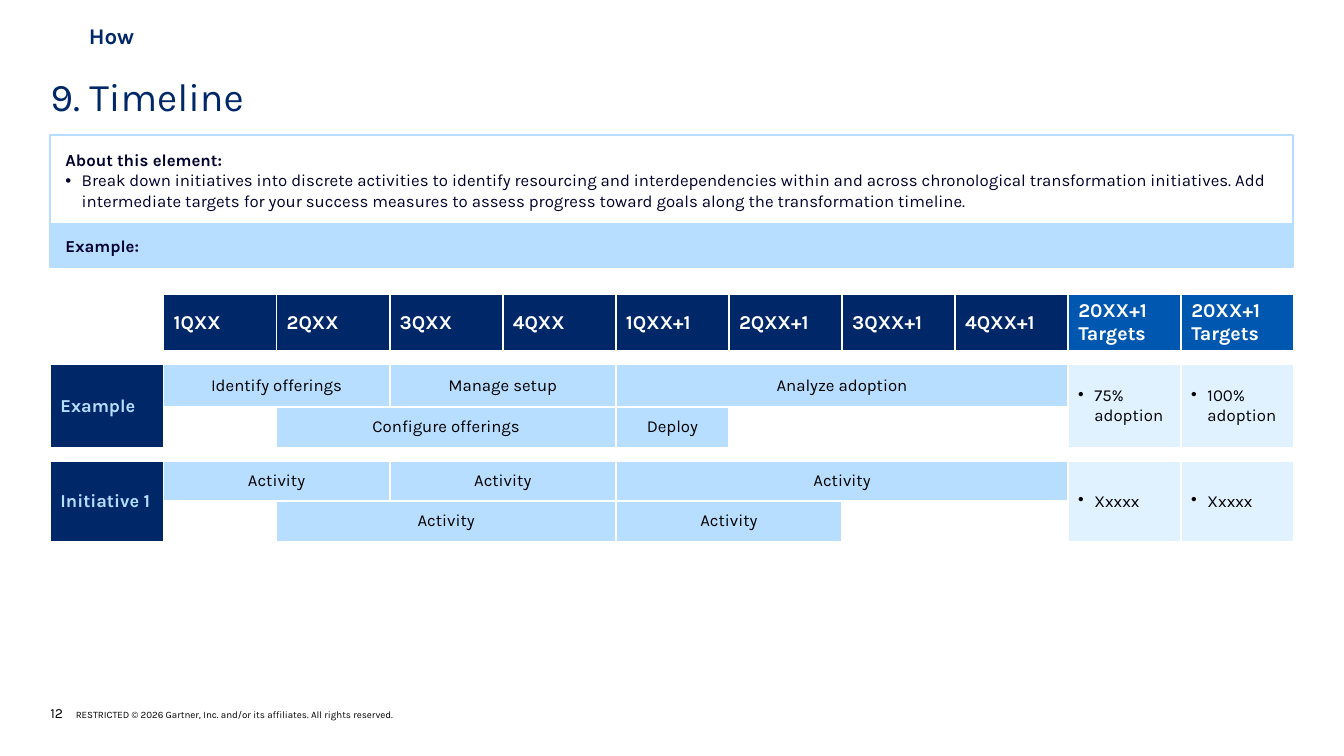
from dataclasses import dataclass
from typing import Any

from lxml import etree
from pptx import Presentation
from pptx.dml.color import RGBColor
from pptx.enum.shapes import MSO_SHAPE
from pptx.enum.text import MSO_ANCHOR, MSO_AUTO_SIZE, PP_ALIGN
from pptx.oxml.ns import qn
from pptx.util import Cm, Pt

RECTANGLE = MSO_SHAPE.RECTANGLE
TOP, MIDDLE, BOTTOM = MSO_ANCHOR.TOP, MSO_ANCHOR.MIDDLE, MSO_ANCHOR.BOTTOM
LEFT, CENTER = PP_ALIGN.LEFT, PP_ALIGN.CENTER
NO_AUTOFIT = MSO_AUTO_SIZE.NONE

FONT = "Karla"
NAVY, BLUE, SKY, PALE = "002869", "0057AF", "B8DEFF", "E0F1FF"
INK, BLACK, WHITE = "00002D", "000000", "FFFFFF"
MARGIN, CONTENT_WIDTH = 1.27, 31.32
COLUMN_WIDTH = 2.85
ROW_HEIGHTS = [1.42, 0.34, 1.07, 1.02, 0.34, 1.0, 1.0]
SPACER_ROWS = [1, 4]
HEADERS = ["1QXX", "2QXX", "3QXX", "4QXX", "1QXX+1", "2QXX+1", "3QXX+1", "4QXX+1",
           "20XX+1 Targets", "20XX+1\nTargets"]
TARGET_COLUMN = 9


@dataclass
class TextStyle:
    size: float
    color: str
    bold: bool = False
    align: Any = LEFT


@dataclass
class Bar:
    text: str
    row: int
    column: int
    span: int


@dataclass
class Initiative:
    name: str
    row: int
    targets: list[str]


BARS = [
    Bar("Identify offerings", 2, 1, 2),
    Bar("Manage setup", 2, 3, 2),
    Bar("Analyze adoption", 2, 5, 4),
    Bar("Configure offerings", 3, 2, 3),
    Bar("Deploy", 3, 5, 1),
    Bar("Activity", 5, 1, 2),
    Bar("Activity", 5, 3, 2),
    Bar("Activity", 5, 5, 4),
    Bar("Activity", 6, 2, 3),
    Bar("Activity", 6, 5, 2),
]
INITIATIVES = [
    Initiative("Example", 2, ["75% adoption", "100% adoption"]),
    Initiative("Initiative 1", 5, ["Xxxxx", "Xxxxx"]),
]


def color(value: str) -> RGBColor:
    return RGBColor.from_string(value)


def apply(target: Any, values: dict[str, Any]) -> None:
    for name, value in values.items():
        setattr(target, name, value)


def place(shape: Any, left: float, top: float, width: float, height: float) -> None:
    apply(shape, {"left": Cm(left), "top": Cm(top), "width": Cm(width), "height": Cm(height)})


def margins(horizontal: float, vertical: float) -> dict[str, Any]:
    return {"margin_left": Cm(horizontal), "margin_right": Cm(horizontal),
            "margin_top": Cm(vertical), "margin_bottom": Cm(vertical)}


def set_frame(shape: Any, anchor: Any, horizontal: float = 0, vertical: float = 0) -> Any:
    frame = shape.text_frame
    apply(frame, {"word_wrap": True, "auto_size": NO_AUTOFIT, "vertical_anchor": anchor,
                  **margins(horizontal, vertical)})
    return frame


def add_run(paragraph: Any, text: str, style: TextStyle) -> None:
    run = paragraph.add_run()
    run.text = text
    apply(run.font, {"name": FONT, "size": Pt(style.size), "bold": style.bold})
    run.font.color.rgb = color(style.color)


def write(paragraph: Any, text: str, style: TextStyle) -> None:
    apply(paragraph, {"alignment": style.align, "space_before": Pt(0)})
    add_run(paragraph, text, style)


def indent(paragraph: Any, distance: float, bullet: str = "") -> None:
    properties = paragraph._p.get_or_add_pPr()
    properties.set("marL", str(Cm(distance)))
    properties.set("indent", str(-Cm(distance)))
    if bullet:
        etree.SubElement(properties, qn("a:buChar")).set("char", bullet)
    else:
        etree.SubElement(properties, qn("a:buNone"))


def outline(shape: Any) -> None:
    shape.line.color.rgb = color(SKY)
    shape.line.width = Pt(1.5)


def add_borders(cell: Any) -> None:
    properties = cell._tc.get_or_add_tcPr()
    for side in ("a:lnL", "a:lnR", "a:lnT", "a:lnB"):
        line = etree.SubElement(properties, qn(side), w=str(Pt(1.5)))
        fill = etree.SubElement(line, qn("a:solidFill"))
        etree.SubElement(fill, qn("a:srgbClr"), val=WHITE)


def fill_cell(cell: Any, fill: str) -> None:
    cell.fill.solid()
    cell.fill.fore_color.rgb = color(fill)


def write_cell(cell: Any, text: str, fill: str, style: TextStyle) -> None:
    fill_cell(cell, fill)
    cell.vertical_anchor = MIDDLE
    for number, line in enumerate(text.split("\n")):
        frame = cell.text_frame
        write(frame.add_paragraph() if number else frame.paragraphs[0], line, style)


def add_headings(slide: Any) -> None:
    title = slide.shapes.title
    place(title, MARGIN, 1.83, CONTENT_WIDTH, 1.24)
    write(set_frame(title, TOP).paragraphs[0], "9. Timeline", TextStyle(28, NAVY))
    section = slide.shapes.add_textbox(0, 0, 0, 0)
    place(section, 2.24, 0.64, 7.26, 0.53)
    write(set_frame(section, MIDDLE).paragraphs[0], "How", TextStyle(16, NAVY, True))


def add_about(slide: Any) -> None:
    about = slide.placeholders[1]
    place(about, MARGIN, 3.4, CONTENT_WIDTH, 2.31)
    outline(about)
    frame = set_frame(about, TOP, 0.38, 0.38)
    heading = frame.paragraphs[0]
    indent(heading, 0)
    write(heading, "About this element:", TextStyle(12, INK, True))
    item = frame.add_paragraph()
    indent(item, 0.41, "•")
    write(item, "Break down initiatives into discrete activities to identify resourcing and "
          "interdependencies within and across chronological transformation initiatives. Add "
          "intermediate targets for your success measures to assess progress toward goals along "
          "the transformation timeline.", TextStyle(12, INK))

    example = slide.shapes.add_shape(RECTANGLE, 0, 0, 0, 0)
    place(example, MARGIN, 5.65, CONTENT_WIDTH, 1.07)
    example.shadow.inherit = False
    example.fill.solid()
    example.fill.fore_color.rgb = color(SKY)
    outline(example)
    write(set_frame(example, MIDDLE, 0.38, 0.25).paragraphs[0], "Example:",
          TextStyle(12, INK, True))


def add_timeline(slide: Any) -> None:
    columns = len(HEADERS) + 1
    table = slide.shapes.add_table(
        len(ROW_HEIGHTS), columns, Cm(MARGIN), Cm(7.42),
        Cm(columns * COLUMN_WIDTH), Cm(sum(ROW_HEIGHTS))).table
    apply(table, {"first_row": False, "horz_banding": False})
    for column in table.columns:
        column.width = Cm(COLUMN_WIDTH)
    for row, height in zip(table.rows, ROW_HEIGHTS):
        row.height = Cm(height)
    for cell in table.iter_cells():
        add_borders(cell)
        fill_cell(cell, WHITE)
    for row in SPACER_ROWS:
        for cell in table.rows[row].cells:
            apply(cell, margins(0, 0))
            etree.SubElement(cell.text_frame.paragraphs[0]._p, qn("a:endParaRPr"), sz="100")
        table.cell(row, 0).merge(table.cell(row, columns - 1))

    for column, header in enumerate(HEADERS, 1):
        write_cell(table.cell(0, column), header, BLUE if column >= TARGET_COLUMN else NAVY,
                   TextStyle(14, WHITE, True))
    for bar in BARS:
        cell = table.cell(bar.row, bar.column)
        if bar.span > 1:
            cell.merge(table.cell(bar.row, bar.column + bar.span - 1))
        write_cell(cell, bar.text, SKY, TextStyle(12, BLACK, align=CENTER))
    for initiative in INITIATIVES:
        name = table.cell(initiative.row, 0)
        name.merge(table.cell(initiative.row + 1, 0))
        write_cell(name, initiative.name, NAVY, TextStyle(13, SKY, True))
        for column, target in enumerate(initiative.targets, TARGET_COLUMN):
            cell = table.cell(initiative.row, column)
            cell.merge(table.cell(initiative.row + 1, column))
            apply(cell, margins(0.25, 0.25))
            indent(cell.text_frame.paragraphs[0], 0.41, "•")
            write_cell(cell, target, PALE, TextStyle(12, BLACK))


def add_footer(slide: Any) -> None:
    footer = slide.shapes.add_textbox(0, 0, 0, 0)
    place(footer, MARGIN, 17.75, 20.3, 0.43)
    paragraph = set_frame(footer, BOTTOM).paragraphs[0]
    indent(paragraph, 0.64)
    write(paragraph, "12", TextStyle(10, BLACK))
    add_run(paragraph, "\tRESTRICTED © 2026 Gartner, Inc. and/or its affiliates. "
            "All rights reserved.", TextStyle(7, BLACK))


def main() -> None:
    presentation = Presentation()
    apply(presentation, {"slide_width": Cm(33.87), "slide_height": Cm(19.05)})
    slide = presentation.slides.add_slide(presentation.slide_layouts[1])
    add_headings(slide)
    add_about(slide)
    add_timeline(slide)
    add_footer(slide)
    presentation.save("out.pptx")


if __name__ == "__main__":
    main()
